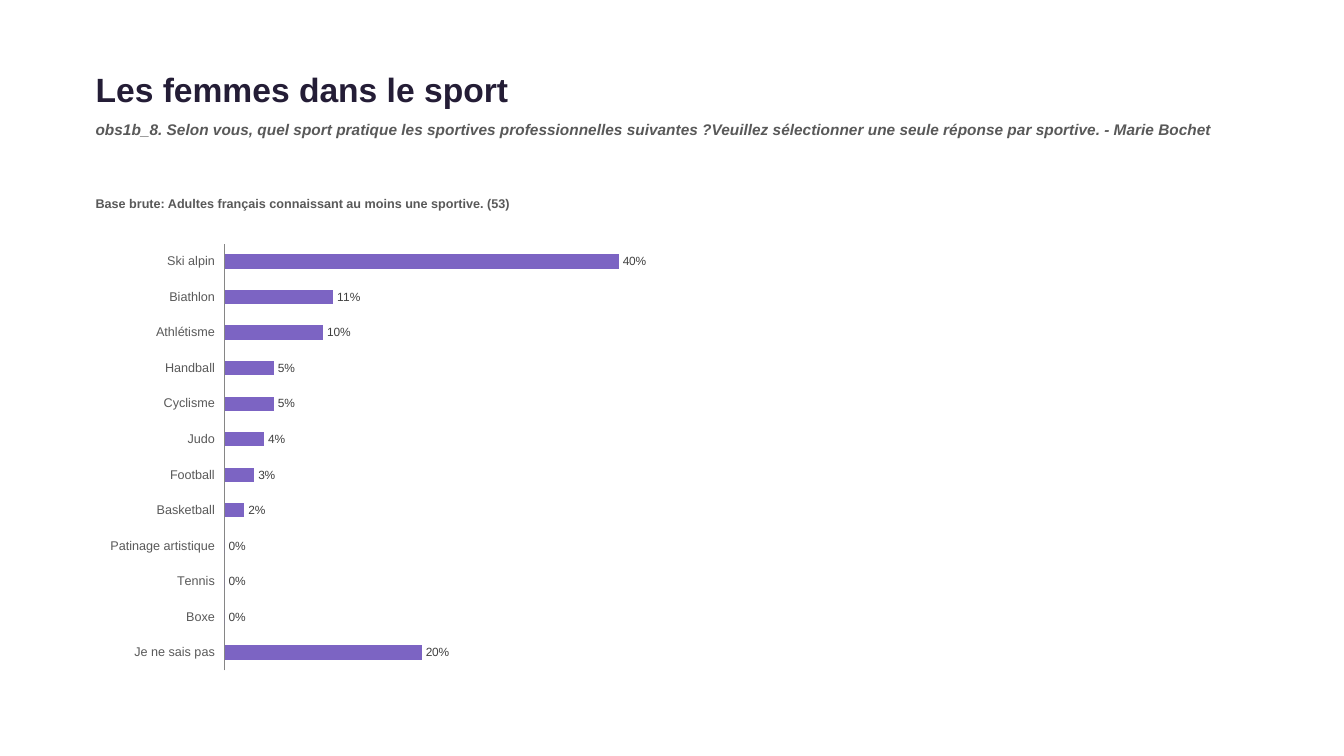
from lxml.etree import SubElement
from pptx import Presentation
from pptx.chart.data import CategoryChartData
from pptx.dml.color import RGBColor
from pptx.enum.chart import XL_CHART_TYPE, XL_LABEL_POSITION, XL_TICK_LABEL_POSITION, XL_TICK_MARK
from pptx.oxml.ns import qn
from pptx.util import Pt

FONT = "Arial"
LEFT, WIDTH = 61.2, 837.4
ANSWERS = [
    ("Ski alpin", 0.4),
    ("Biathlon", 0.11),
    ("Athlétisme", 0.1),
    ("Handball", 0.05),
    ("Cyclisme", 0.05),
    ("Judo", 0.04),
    ("Football", 0.03),
    ("Basketball", 0.02),
    ("Patinage artistique", 0),
    ("Tennis", 0),
    ("Boxe", 0),
    ("Je ne sais pas", 0.2),
]


def rgb(value):
    return RGBColor.from_string(value)


def style_font(font, size, color, bold=False, italic=False):
    font.name = FONT
    font.size = Pt(size)
    font.bold = bold
    font.italic = italic
    font.color.rgb = rgb(color)


def add_text(slide, box, text, size, color, italic=False):
    tf = slide.shapes.add_textbox(*map(Pt, box)).text_frame
    tf.word_wrap = True
    p = tf.paragraphs[0]
    p.text = text
    style_font(p.font, size, color, bold=True, italic=italic)


def add_header(slide, left, top, width):
    add_text(slide, (left, top, width, 36), "Les femmes dans le sport", 24, "241D36")
    add_text(
        slide, (left, top + 36.7, width, 54),
        "obs1b_8. Selon vous, quel sport pratique les sportives professionnelles suivantes ?"
        "Veuillez sélectionner une seule réponse par sportive. - Marie Bochet",
        11, "595959", italic=True,
    )
    add_text(
        slide, (left, top + 90.7, width, 31.7),
        "Base brute: Adultes français connaissant au moins une sportive. (53)", 9, "595959",
    )


def set_plot_layout(chart, x, y, w, h):
    plot_area = chart.plots[0]._element.getparent()
    layout = plot_area.find(qn("c:layout"))
    if layout is None:
        layout = SubElement(plot_area, qn("c:layout"))
        plot_area.insert(0, layout)
    manual = SubElement(layout, qn("c:manualLayout"))
    settings = [("layoutTarget", "inner"), ("xMode", "edge"), ("yMode", "edge"),
                ("x", x), ("y", y), ("w", w), ("h", h)]
    for tag, value in settings:
        SubElement(manual, qn(f"c:{tag}")).set("val", str(value))


def add_answer_chart(slide, left, top, width, height):
    data = CategoryChartData(number_format="0%")
    names, values = zip(*reversed(ANSWERS))
    data.categories = names
    data.add_series("Series 1", values)
    chart = slide.shapes.add_chart(
        XL_CHART_TYPE.BAR_CLUSTERED, *map(Pt, (left, top, width, height)), data
    ).chart
    chart.has_legend = False
    chart.has_title = False
    style_font(chart.font, 18, "000000")
    set_plot_layout(chart, 0.12, 0.02, 0.85, 0.96)

    cat_axis = chart.category_axis
    cat_axis.major_tick_mark = XL_TICK_MARK.NONE
    cat_axis.minor_tick_mark = XL_TICK_MARK.NONE
    cat_axis.tick_label_position = XL_TICK_LABEL_POSITION.LOW
    cat_axis.format.line.color.rgb = rgb("868686")
    cat_axis.format.line.width = Pt(0.75)
    style_font(cat_axis.tick_labels.font, 9, "595959")

    val_axis = chart.value_axis
    val_axis.minimum_scale = 0
    val_axis.maximum_scale = 1
    val_axis.major_unit = 0.1
    val_axis.has_major_gridlines = False
    val_axis.visible = False

    plot = chart.plots[0]
    plot.gap_width = 150
    plot.overlap = -10
    plot.vary_by_categories = False
    series = plot.series[0]
    series.format.fill.solid()
    series.format.fill.fore_color.rgb = rgb("7C64C3")

    labels = series.data_labels
    labels.show_value = True
    labels.position = XL_LABEL_POSITION.OUTSIDE_END
    labels.number_format = "0%"
    labels.number_format_is_linked = False
    style_font(labels.font, 8.5, "404040")


def main():
    prs = Presentation()
    prs.slide_width = Pt(960)
    prs.slide_height = Pt(540)
    s = prs.slides.add_slide(prs.slide_layouts[6])
    add_header(s, LEFT, 45.4, WIDTH)
    add_answer_chart(s, LEFT, 167.8, 828, 317.5)
    prs.save("out.pptx")


if __name__ == "__main__":
    main()
